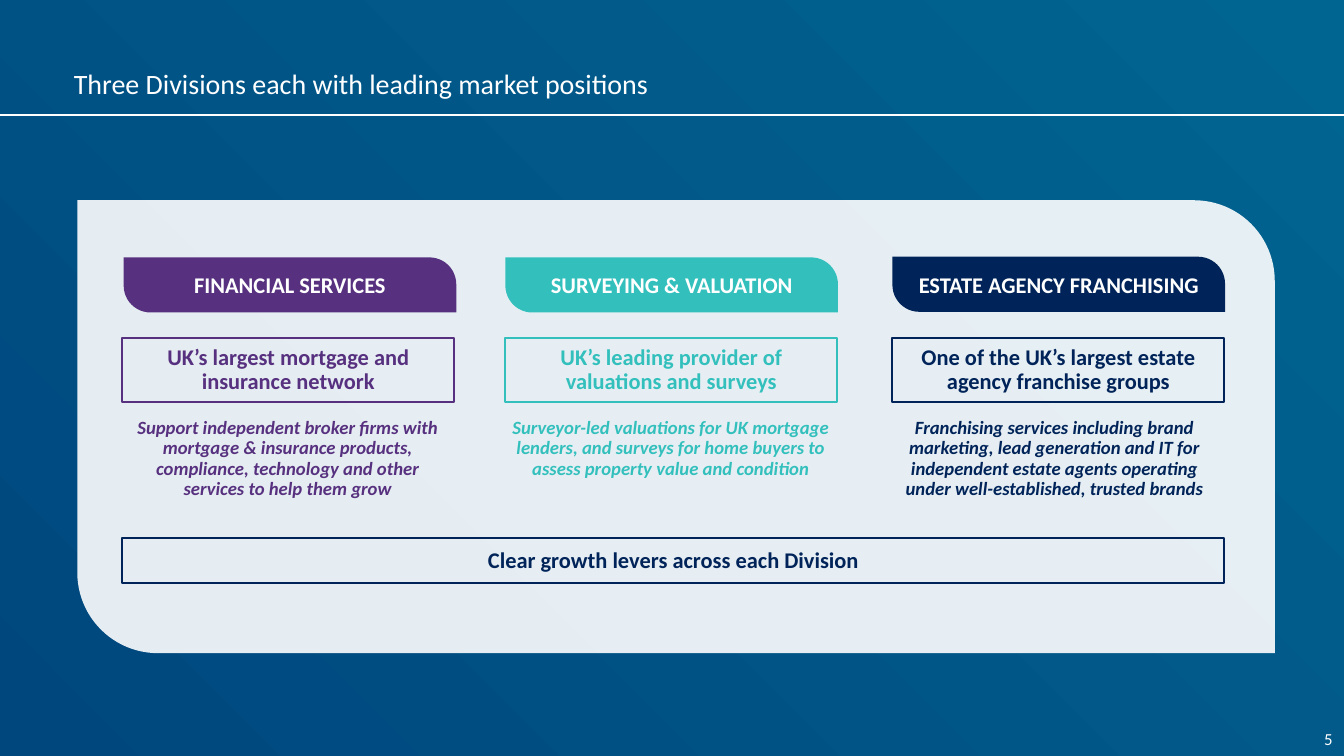
from lxml import etree
from pptx import Presentation
from pptx.dml.color import RGBColor
from pptx.enum import shapes, text
from pptx.oxml import ns
from pptx.util import Inches, Pt

WHITE = RGBColor(0xFF, 0xFF, 0xFF)
DEEP_BLUE = RGBColor(0x00, 0x47, 0x7E)
SEA_BLUE = RGBColor(0x01, 0x65, 0x91)
PURPLE = RGBColor(0x57, 0x31, 0x7F)
TEAL = RGBColor(0x33, 0xC0, 0xBD)
NAVY = RGBColor(0x00, 0x24, 0x59)
FONT = "Calibri"

TITLE = "Three Divisions each with leading market positions"
PAGE_NUMBER = "5"
SUMMARY = "Clear growth levers across each Division"
# heading, claim, description, colour, then left edge of tab, claim and
# description, and top edge of tab
DIVISIONS = [
    ("FINANCIAL SERVICES",
     "UK’s largest mortgage and insurance network",
     "Support independent broker firms with mortgage & insurance products, "
     "compliance, technology and other services to help them grow",
     PURPLE, (1.84, 1.82, 1.82), 3.83),
    ("SURVEYING & VALUATION",
     "UK’s leading provider of valuations and surveys",
     "Surveyor-led valuations for UK mortgage lenders, and surveys for "
     "home buyers to assess property value and condition",
     TEAL, (7.52, 7.52, 7.52), 3.83),
    ("ESTATE AGENCY FRANCHISING",
     "One of the UK’s largest estate agency franchise groups",
     "Franchising services including brand marketing, lead generation and IT "
     "for independent estate agents operating under well-established, "
     "trusted brands",
     NAVY, (13.28, 13.28, 13.23), 3.82),
]

RECT = shapes.MSO_SHAPE.RECTANGLE
LEAF = shapes.MSO_SHAPE.ROUND_2_DIAG_RECTANGLE
CENTER, LEFT, RIGHT = (text.PP_ALIGN.CENTER, text.PP_ALIGN.LEFT,
                       text.PP_ALIGN.RIGHT)
MIDDLE, TOP = text.MSO_ANCHOR.MIDDLE, text.MSO_ANCHOR.TOP


def write(sp, words, size, color, align=CENTER, anchor=MIDDLE, inset=0.09,
          spacing=1.0, bold=True, italic=False):
    tf = sp.text_frame
    tf.word_wrap = True
    tf.vertical_anchor = anchor
    tf.margin_left = tf.margin_right = Inches(inset)
    tf.margin_top = tf.margin_bottom = Inches(min(inset, 0.09))
    tf.text = words
    p = tf.paragraphs[0]
    p.alignment = align
    p.line_spacing = spacing
    font = p.runs[0].font
    font.name, font.size, font.color.rgb = FONT, Pt(size), color
    font.bold, font.italic = bold, italic


def add_box(s, box, kind=RECT, fill=None, line=None):
    sp = s.shapes.add_shape(kind, *map(Inches, box))
    sp.shadow.inherit = False
    if fill is None:
        sp.fill.background()
    else:
        sp.fill.solid()
        sp.fill.fore_color.rgb = fill
    if line is None:
        sp.line.fill.background()
    else:
        sp.line.color.rgb = line
        sp.line.width = Pt(2.25)
    return sp


def add_leaf(s, box, radius, fill):
    """Panel rounded at its top right and bottom left corners only."""
    sp = add_box(s, box, LEAF, fill)
    sp.adjustments[0] = 0
    sp.adjustments[1] = radius / min(box[2:])
    return sp


def add_text(s, box, *args, **kwargs):
    write(s.shapes.add_textbox(*map(Inches, box)), *args, **kwargs)


def add_backdrop(s):
    sp = add_box(s, (0, 0, 20, 11.25))
    sp.fill.gradient()
    sp.fill.gradient_angle = 45
    for stop, color in zip(sp.fill.gradient_stops, (DEEP_BLUE, SEA_BLUE)):
        stop.color.rgb = color

    rule = s.shapes.add_connector(shapes.MSO_CONNECTOR.STRAIGHT, 0,
                                  Inches(1.71), Inches(20), Inches(1.71))
    rule.line.color.rgb = WHITE
    rule.line.width = Pt(1.5)
    etree.SubElement(rule._element.spPr, ns.qn("a:effectLst"))

    add_text(s, (1, 0.9, 16.62, 0.68), TITLE, 30, WHITE, LEFT,
             inset=0.1, bold=False)
    add_text(s, (17.6, 10.8, 2.33, 0.4), PAGE_NUMBER, 18, WHITE, RIGHT,
             inset=0.1, bold=False)

    panel = add_leaf(s, (1.15, 2.98, 17.82, 6.74), 1.2, WHITE)
    color = panel.fill._xPr.find(ns.qn("a:solidFill"))[0]
    etree.SubElement(color, ns.qn("a:alpha"), val="90000")


def add_division(s, heading, claim, description, color, lefts, tab_top):
    tab_left, claim_left, description_left = lefts
    tab = add_leaf(s, (tab_left, tab_top, 4.95, 0.82), 0.4, color)
    write(tab, heading, 24, WHITE, inset=0)
    claim_box = add_box(s, (claim_left, 5.03, 4.94, 0.95), line=color)
    write(claim_box, claim, 24, color, spacing=0.9)
    add_text(s, (description_left, 6.14, 4.92, 1.37), description, 20, color,
             anchor=TOP, spacing=0.9, italic=True)


def main():
    prs = Presentation()
    prs.slide_width, prs.slide_height = Inches(20), Inches(11.25)
    s = prs.slides.add_slide(prs.slide_layouts[6])
    add_backdrop(s)
    for division in DIVISIONS:
        add_division(s, *division)
    summary = add_box(s, (1.82, 8.01, 16.4, 0.67), line=NAVY)
    write(summary, SUMMARY, 24, NAVY, spacing=0.9)
    prs.save("out.pptx")


if __name__ == "__main__":
    main()
